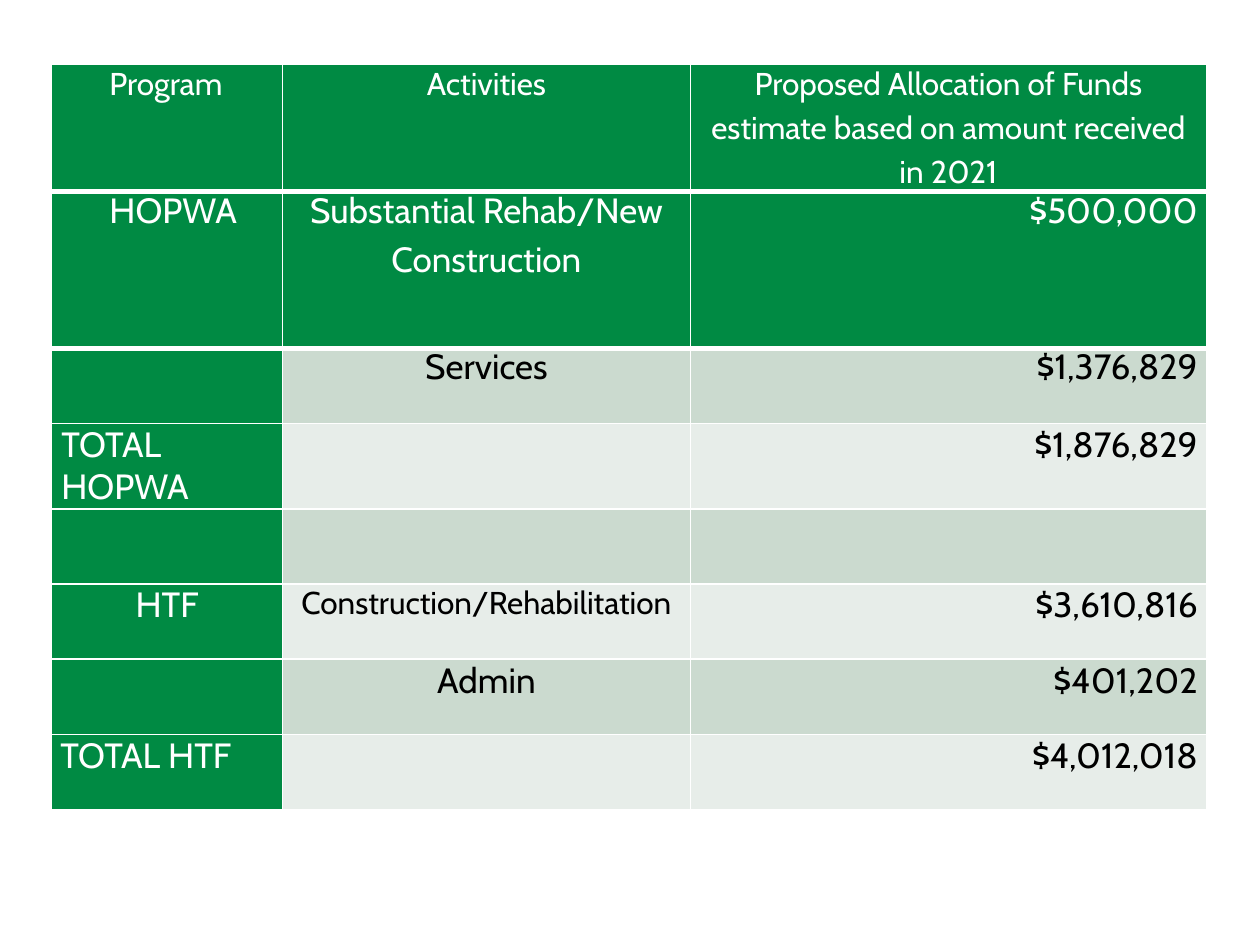
import pptx
import pptx.util
import pptx.dml.color
import pptx.enum.text
import pptx.oxml
import pptx.oxml.ns

Pt = pptx.util.Pt
RGB = pptx.dml.color.RGBColor
ALIGN = pptx.enum.text.PP_ALIGN
LEFT, MID, RIGHT = ALIGN.LEFT, ALIGN.CENTER, ALIGN.RIGHT

GREEN = RGB(0x00, 0x8A, 0x43)
SAGE = RGB(0xCB, 0xDA, 0xCF)
PALE = RGB(0xE7, 0xED, 0xE9)
WHITE = RGB(0xFF, 0xFF, 0xFF)
BLACK = RGB(0x00, 0x00, 0x00)

WIDTHS = (132, 233, 295)
HEIGHTS = (72.5, 89.5) + (43,) * 6
HEAD = "Proposed Allocation of Funds\nestimate based on amount received in 2021"
ROWS = (
    ("Program", "Activities", HEAD),
    ("HOPWA", "Substantial Rehab/New\nConstruction", "$500,000"),
    ("", "Services", "$1,376,829"),
    ("TOTAL HOPWA", "", "$1,876,829"),
    ("", "", ""),
    ("HTF", "Construction/Rehabilitation", "$3,610,816"),
    ("", "Admin", "$401,202"),
    ("TOTAL HTF", "", "$4,012,018"),
)
INDENTS = {"Program": 33, "HOPWA": 33, "TOTAL HOPWA": 5.5, "TOTAL HTF": 5}


class Deck:
    """Holds the style and the current slide."""

    font = "Cabin"
    size = 20
    small = 18

    def __init__(self, wide, high):
        self.prs = pptx.Presentation()
        self.prs.slide_width, self.prs.slide_height = Pt(wide), Pt(high)
        self.slide = self.prs.slides.add_slide(self.prs.slide_layouts[6])

    def table(self, left, top, widths, heights):
        frame = self.slide.shapes.add_table(
            len(heights), len(widths), Pt(left), Pt(top), Pt(sum(widths)), Pt(sum(heights)))
        grid = frame.table
        grid.first_row = grid.horz_banding = False
        for col, wide in zip(grid.columns, widths):
            col.width = Pt(wide)
        for row, high in zip(grid.rows, heights):
            row.height = Pt(high)
        return grid

    def cell(self, cell, fill, top, base):
        props = cell._tc.get_or_add_tcPr()
        for side, width in (("L", 1), ("R", 1), ("T", top), ("B", base)):
            props.append(pptx.oxml.parse_xml(
                f'<a:ln{side} {pptx.oxml.ns.nsdecls("a")} w="{Pt(width)}"><a:solidFill>'
                f'<a:srgbClr val="{WHITE}"/></a:solidFill></a:ln{side}>'))
        cell.fill.solid()
        cell.fill.fore_color.rgb = fill
        cell.margin_left = cell.margin_right = Pt(0)
        cell.margin_top = cell.margin_bottom = Pt(0)

    def text(self, cell, text, size, color, align, lead=None):
        cell.text_frame.text = text
        for par in cell.text_frame.paragraphs:
            par.alignment = align
            par.line_spacing = lead
            for run in par.runs:
                run.font.name = self.font
                run.font.size = Pt(size)
                run.font.bold = False
                run.font.color.rgb = color


def main():
    deck = Deck(720, 540)
    grid = deck.table(29.5, 37, WIDTHS, HEIGHTS)
    for r, row in enumerate(ROWS):
        for c, text in enumerate(row):
            cell = grid.cell(r, c)
            dark = r < 2 or c == 0
            fill = GREEN if dark else PALE if r % 2 else SAGE
            deck.cell(cell, fill, 3 if r in (1, 2) else 1, 3 if r < 2 else 1)
            if not text:
                continue
            size = deck.small if r == 0 or (r, c) == (5, 1) else deck.size
            align = LEFT if text in INDENTS else RIGHT if c == 2 and r else MID
            lead = Pt(23.2) if r in (1, 2) else None
            deck.text(cell, text, size, WHITE if dark else BLACK, align, lead)
            cell.margin_left = Pt(INDENTS.get(text, 0))
            if align == RIGHT:
                cell.margin_right = Pt(5)
    head = grid.cell(0, 2)
    head.margin_left = head.margin_right = Pt(10.8)
    head.text_frame.paragraphs[1].line_spacing = 1.15
    build = grid.cell(1, 1).text_frame.paragraphs[1]
    build.line_spacing = None
    build.space_before = Pt(3.6)
    deck.prs.save("out.pptx")


if __name__ == "__main__":
    main()
